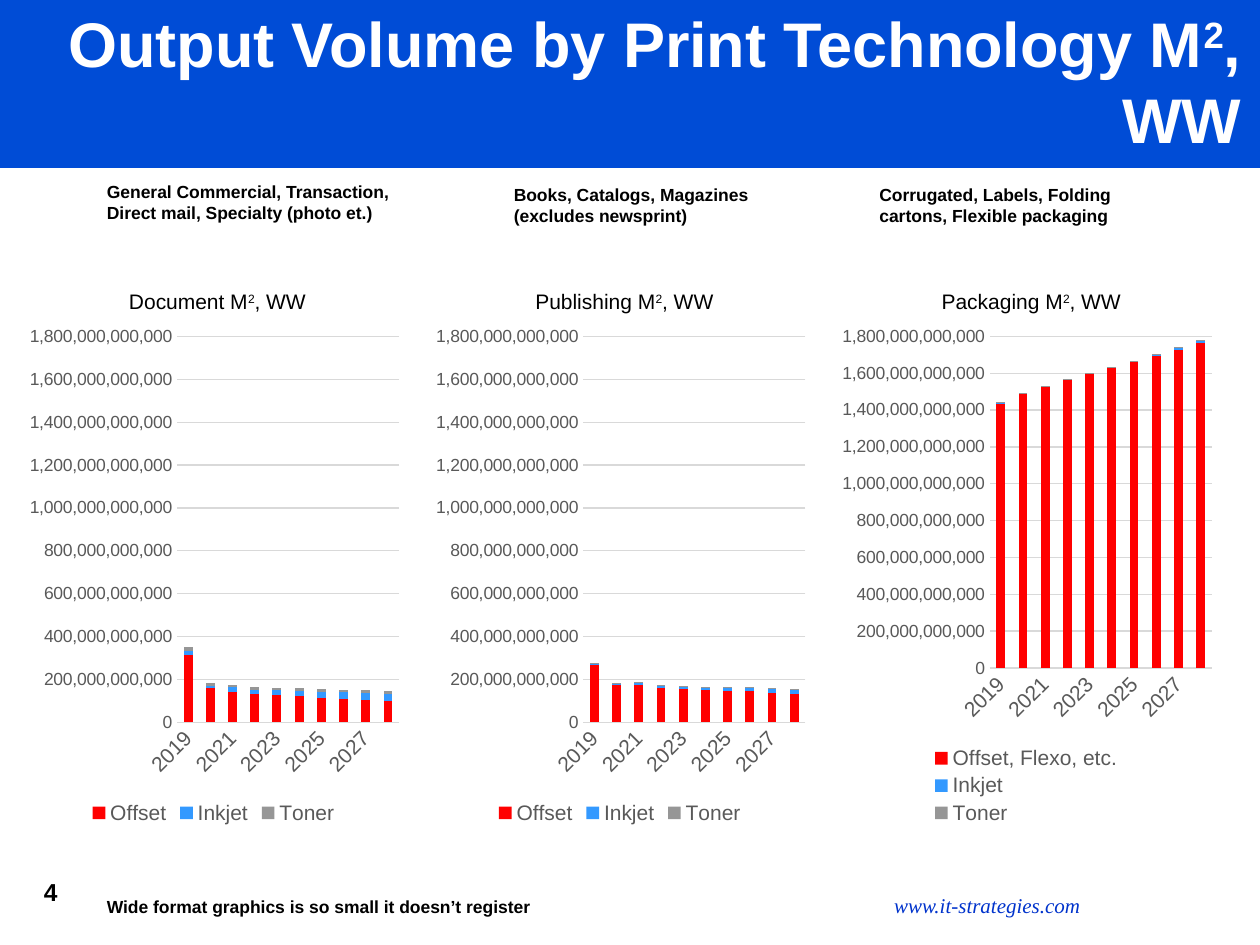
from dataclasses import dataclass
from lxml.etree import SubElement as Sub
from pptx import Presentation as Deck
from pptx.chart.data import CategoryChartData as Data
from pptx.dml.color import RGBColor as RGB
from pptx.enum.chart import XL_CHART_TYPE as Kind, XL_LEGEND_POSITION as Spot, XL_TICK_MARK as Tick
from pptx.enum.shapes import MSO_SHAPE as Form
from pptx.enum.text import MSO_ANCHOR as Anchor, PP_ALIGN as Align
from pptx.oxml.ns import qn
from pptx.util import Pt


@dataclass(frozen=True)
class Theme:
    sans: str = "Arial"
    serif: str = "Times New Roman"
    band: RGB = RGB(0x00, 0x4C, 0xD6)
    link: RGB = RGB(0x00, 0x33, 0xCC)
    white: RGB = RGB(0xFF, 0xFF, 0xFF)
    black: RGB = RGB(0x00, 0x00, 0x00)
    label: RGB = RGB(0x59, 0x59, 0x59)
    grid: RGB = RGB(0xD9, 0xD9, 0xD9)
    bars: tuple = (RGB(0xFF, 0x00, 0x00), RGB(0x33, 0x99, 0xFF), RGB(0x96, 0x96, 0x96))
    head: int = 36
    page: int = 14
    mid: int = 12
    small: int = 10


def assign(obj, **vals):
    """Set each named value on the object."""
    for key, val in vals.items():
        setattr(obj, key, val)


def style(font, color, **vals):
    """Give a font its colour and its format values."""
    assign(font, **vals)
    font.color.rgb = color


def write(para, text, color, **vals):
    """Write text in which ^ marks the next character as superscript."""
    first, *rest = text.split("^")
    parts = [(first, False)]
    for bit in rest:
        parts += [(bit[0], True), (bit[1:], False)]
    for part, high in parts:
        run = para.add_run()
        run.text = part
        style(run.font, color, **vals)
        if high:
            run._r.get_or_add_rPr().set("baseline", "30000")


def place(node, inner=False, **vals):
    """Fix the place of a chart part as shares of the chart."""
    for old in node.findall(qn("c:layout")):
        node.remove(old)
    lay = Sub(node, qn("c:layout"))
    spot = Sub(lay, qn("c:manualLayout"))
    if inner:
        Sub(spot, qn("c:layoutTarget")).set("val", "inner")
    for key in "xy":
        Sub(spot, qn(f"c:{key}Mode")).set("val", "edge")
    for key, val in vals.items():
        Sub(spot, qn(f"c:{key}")).set("val", str(val))
    return lay


class Page:
    """Hold the theme and the current slide."""

    def __init__(self, slide, theme):
        self.slide, self.theme = slide, theme

    def band(self, *area):
        """Add a plain filled bar."""
        bar = self.slide.shapes.add_shape(Form.RECTANGLE, *map(Pt, area))
        bar.shadow.inherit = False
        bar.fill.solid()
        bar.fill.fore_color.rgb = self.theme.band
        bar.line.fill.background()

    def text(self, text, area, color=None, wrap=True, align=Align.LEFT, anchor=Anchor.TOP, **vals):
        """Add a text box, bold and sans unless told otherwise."""
        frame = self.slide.shapes.add_textbox(*map(Pt, area)).text_frame
        assign(frame, word_wrap=wrap, vertical_anchor=anchor)
        para = frame.paragraphs[0]
        para.alignment = align
        form = {"name": self.theme.sans, "size": Pt(self.theme.small), "bold": True} | vals
        form["size"] = Pt(form.pop("pts")) if "pts" in form else form["size"]
        write(para, text, color or self.theme.black, **form)

    def chart(self, title, area, years, rows, tall):
        """Add a stacked column chart."""
        look = self.theme
        data = Data(number_format="#,##0")
        data.categories = years
        for name, vals in rows.items():
            data.add_series(name, vals)
        chart = self.slide.shapes.add_chart(Kind.COLUMN_STACKED, *map(Pt, area), data).chart
        mid = {"name": look.sans, "size": Pt(look.mid)}
        small = mid | {"size": Pt(look.small)}
        style(chart.font, look.black, **small)

        assign(chart, has_title=True, has_legend=True)
        head = chart.chart_title
        write(head.text_frame.paragraphs[0], title, look.black, bold=False, **mid)
        node = head._element
        lay = place(node, x=0.27, y=0.04)
        node.find(qn("c:tx")).addnext(lay)
        assign(chart.legend, position=Spot.BOTTOM, include_in_layout=False)
        style(chart.legend.font, look.label, **mid)

        plot = chart.plots[0]
        assign(plot, gap_width=150, overlap=100, vary_by_categories=False)
        for row, color in zip(plot.series, look.bars):
            row.format.fill.solid()
            row.format.fill.fore_color.rgb = color
        root = plot._element.getparent()
        root.insert(0, place(root, inner=True, x=0.405, y=0.131, w=0.578, h=tall))

        cat, val = chart.category_axis, chart.value_axis
        for axis, form in ((cat, mid), (val, small)):
            assign(axis, major_tick_mark=Tick.NONE, minor_tick_mark=Tick.NONE)
            style(axis.tick_labels.font, look.label, **form)
        cat._element.find(qn("c:txPr")).find(qn("a:bodyPr")).set("rot", "-2700000")
        assign(val, minimum_scale=0, maximum_scale=1.8e12, major_unit=2e11, has_major_gridlines=True)
        assign(val.tick_labels, number_format="#,##0", number_format_is_linked=False)
        val.format.line.fill.background()
        for line in (cat.format.line, val.major_gridlines.format.line):
            line.color.rgb = look.grid
            line.width = Pt(0.75)


CHARTS = (
    ("Document M^2, WW", "Offset", 0.681,
     (315, 158, 144, 131, 126, 122, 115, 109, 104, 98),
     (18499334391, 12619899502, 18811503379, 20528912381, 22974105480,
      25728081324, 28679706261, 32642442223, 33840150882, 35082193072),
     (16796812449, 11192719012, 11199922843, 11181906540, 11251121165,
      11221154684, 11154660568, 11137905696, 11167682987, 11241178902)),
    ("Publishing M^2, WW", "Offset", 0.681,
     (266, 174, 174, 160, 155, 150, 146, 145, 139, 134),
     (7406064378, 6144293944, 9672983671, 10542205009, 11447845362,
      12651507493, 14470759709, 16006169026, 16609296121, 17261282872),
     (2726037586, 2590162437, 2978404820, 3276070983, 3538020791,
      3820920832, 4011938697, 4212481888, 4423050333, 4644145225)),
    ("Packaging M^2, WW", "Offset, Flexo, etc.", 0.585,
     (1440, 1491, 1529, 1565, 1597, 1630, 1660, 1695, 1727, 1764),
     (492698522, 643224682, 1041049865, 1812182507, 2977405704,
      4613689219, 6785789027, 9806133432, 10888789259, 12079427275),
     (1085166147, 1226417080, 1412818655, 1352605135, 1485219995,
      1619684812, 1774469354, 1949844500, 2102603723, 2254251535)),
)
NOTES = (
    ("General Commercial, Transaction, Direct mail, Specialty (photo et.)", 54, 100),
    ("Books, Catalogs, Magazines (excludes newsprint)", 286.5, 101.5),
    ("Corrugated, Labels, Folding cartons, Flexible packaging", 495.4, 101.5),
)


def main():
    """Build and save the slide."""
    deck = Deck()
    assign(deck, slide_width=Pt(720), slide_height=Pt(540))
    look = Theme()
    page = Page(deck.slides.add_slide(deck.slide_layouts[6]), look)
    page.text("www.it-strategies.com", (503.3, 506.2, 121.7, 21.6), look.link, wrap=False,
              align=Align.CENTER, name=look.serif, pts=look.mid, bold=False, italic=True)
    page.band(0, 0, 720, 96)
    page.text("Output Volume by Print Technology M^2, WW", (-8, 0.7, 724.4, 90), look.white,
              align=Align.RIGHT, anchor=Anchor.MIDDLE, pts=look.head)
    years = [str(year) for year in range(2019, 2029)]
    for i, (title, press, tall, base, ink, toner) in enumerate(CHARTS):
        rows = {press: [num * 10**9 for num in base], "Inkjet": ink, "Toner": toner}
        page.chart(title, (12.24 + 232.2 * i, 149.8, 219.6, 324), years, rows, tall)
    for note, left, top in NOTES:
        page.text(note, (left, top, 183.6, 31.7))
    page.text("4", (18, 491.8, 150, 36), wrap=False, anchor=Anchor.MIDDLE, pts=look.page)
    page.text("Wide format graphics is so small it doesn’t register", (54, 508.3, 261.4, 19.4), wrap=False)
    deck.save("out.pptx")


if __name__ == "__main__":
    main()
